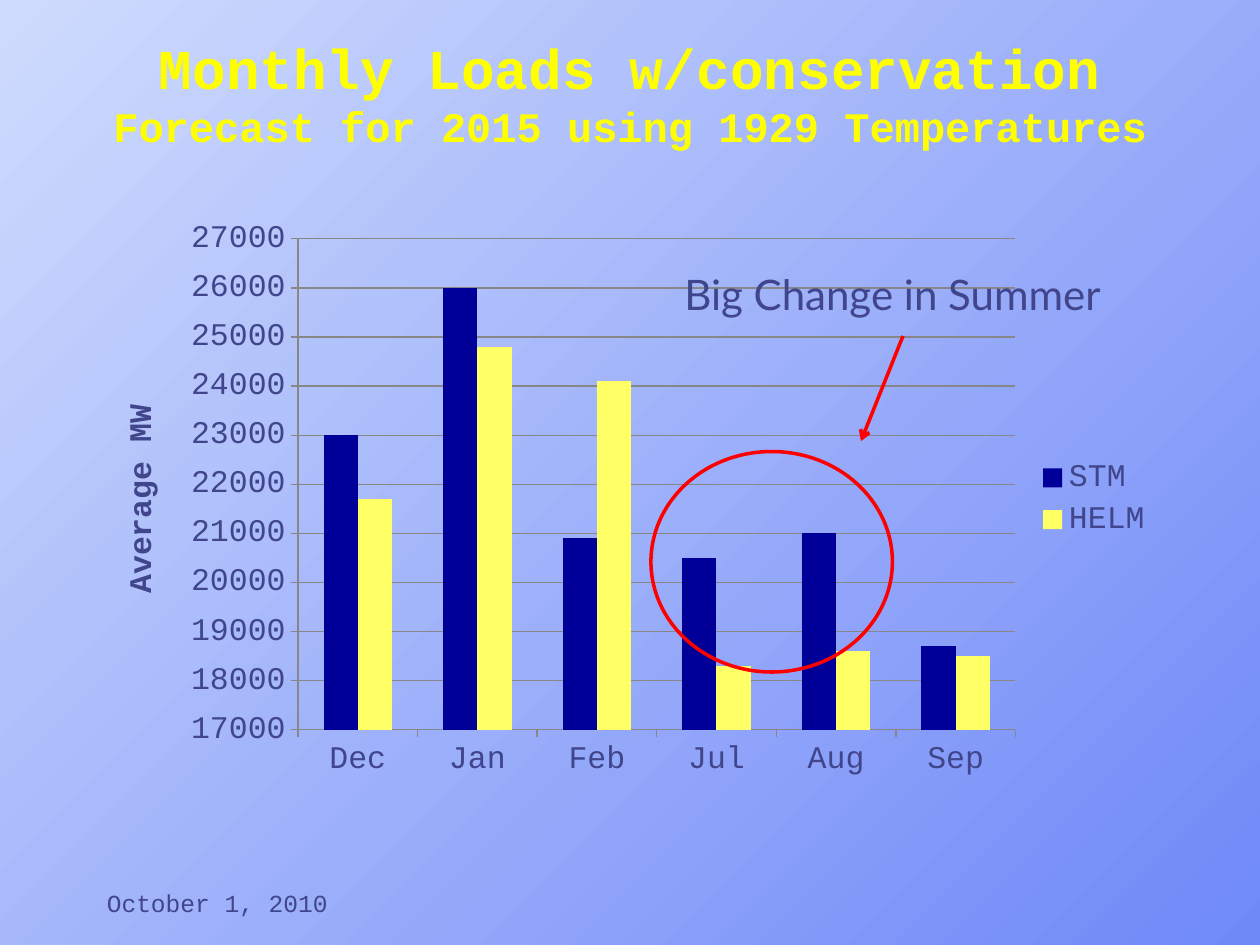
from dataclasses import dataclass
from lxml import etree
from pptx import Presentation
from pptx.chart import data as cd
from pptx.dml.color import RGBColor
from pptx.enum import chart as ce, shapes, text
from pptx.oxml import ns
from pptx.util import Pt

PX = 9525
YELLOW = RGBColor(0xFF, 0xFF, 0x00)
INDIGO = RGBColor(0x40, 0x45, 0x8C)
NAVY = RGBColor(0x00, 0x00, 0x99)
LEMON = RGBColor(0xFF, 0xFF, 0x66)
RED = RGBColor(0xFF, 0x00, 0x00)
GRAY = RGBColor(0x87, 0x87, 0x87)
SKY = RGBColor(0xCF, 0xDB, 0xFD)
BLUE = RGBColor(0x6F, 0x89, 0xF7)
MONO = "Courier New"


@dataclass
class Box:
    left: int
    top: int
    width: int
    height: int

    def emu(self) -> tuple:
        return tuple(v * PX for v in (self.left, self.top, self.width, self.height))


@dataclass
class Label:
    wording: str
    box: Box
    size: int
    font: str
    anchor: text.MSO_ANCHOR


@dataclass
class Load:
    model: str
    megawatts: tuple
    color: RGBColor


MONTHS = ("Dec", "Jan", "Feb", "Jul", "Aug", "Sep")
LOADS = (
    Load("STM", (23000, 26000, 20900, 20500, 21000, 18700), NAVY),
    Load("HELM", (21700, 24800, 24100, 18300, 18600, 18500), LEMON),
)
LABELS = (
    Label("October 1, 2010", Box(72, 656, 200, 48), 14, MONO, text.MSO_ANCHOR.BOTTOM),
    Label("Big Change in Summer", Box(512, 200, 384, 48), 24, "Lato", text.MSO_ANCHOR.TOP),
)
PLOT = {"xMode": "edge", "yMode": "edge", "x": 0.19, "y": 0.05, "w": 0.67, "h": 0.85}


def apply(target, values: dict) -> None:
    for key, value in values.items():
        setattr(target, key, value)


def style_font(font, size: int, name: str, color: RGBColor, bold: bool = False) -> None:
    apply(font, {"size": Pt(size), "name": name, "bold": bold})
    font.color.rgb = color


def style_line(line, color: RGBColor, width: float) -> None:
    line.color.rgb = color
    line.width = Pt(width)


def paint_background(slide) -> None:
    fill = slide.background.fill
    fill.gradient()
    fill.gradient_angle = 315
    for stop, color, position in zip(fill.gradient_stops, (SKY, BLUE), (0, 1)):
        stop.color.rgb = color
        stop.position = position


def write_title(slide) -> None:
    title = slide.shapes.title
    apply(title, dict(zip(("left", "top", "width", "height"), Box(72, 32, 816, 88).emu())))
    apply(title.text_frame, {"vertical_anchor": text.MSO_ANCHOR.BOTTOM,
                             "auto_size": text.MSO_AUTO_SIZE.NONE, "word_wrap": True})
    heading = title.text_frame.paragraphs[0]
    apply(heading, {"alignment": text.PP_ALIGN.CENTER, "line_spacing": 1.0})
    topic = heading.add_run()
    topic.text = "Monthly Loads w/conservation"
    heading.add_line_break()
    basis = heading.add_run()
    basis.text = "Forecast for 2015 using 1929 Temperatures"
    for run, size in ((topic, 32), (basis, 24)):
        style_font(run.font, size, MONO, YELLOW, True)


def draw_loads(slide, box: Box) -> None:
    monthly = cd.CategoryChartData(number_format="General")
    monthly.categories = MONTHS
    for load in LOADS:
        monthly.add_series(load.model, load.megawatts)
    chart = slide.shapes.add_chart(ce.XL_CHART_TYPE.COLUMN_CLUSTERED, *box.emu(), monthly).chart
    style_font(chart.font, 18, MONO, INDIGO)
    apply(chart, {"has_title": False, "has_legend": True})
    apply(chart.legend, {"position": ce.XL_LEGEND_POSITION.RIGHT, "include_in_layout": False})
    columns = chart.plots[0]
    apply(columns, {"gap_width": 150, "overlap": 0, "vary_by_categories": False})
    for series, load in zip(columns.series, LOADS):
        series.format.fill.solid()
        series.format.fill.fore_color.rgb = load.color
        series.invert_if_negative = False
    megawatts = chart.value_axis
    apply(megawatts, {"minimum_scale": 17000, "maximum_scale": 27000, "major_unit": 1000,
                      "has_major_gridlines": True, "has_title": True})
    style_line(megawatts.major_gridlines.format.line, GRAY, 0.75)
    for axis in (chart.category_axis, megawatts):
        axis.major_tick_mark = ce.XL_TICK_MARK.OUTSIDE
        style_line(axis.format.line, GRAY, 0.75)
    caption = megawatts.axis_title.text_frame.paragraphs[0].add_run()
    caption.text = "Average MW"
    style_font(caption.font, 18, MONO, INDIGO, True)
    plot_area = columns._element.getparent()
    for old in plot_area.findall(ns.qn("c:layout")):
        plot_area.remove(old)
    layout = etree.Element(ns.qn("c:layout"))
    manual = etree.SubElement(layout, ns.qn("c:manualLayout"))
    for tag, value in {"layoutTarget": "inner", **PLOT}.items():
        etree.SubElement(manual, ns.qn(f"c:{tag}")).set("val", str(value))
    plot_area.insert(0, layout)


def write_label(slide, label: Label) -> None:
    frame = slide.shapes.add_textbox(*label.box.emu()).text_frame
    apply(frame, {"word_wrap": True, "vertical_anchor": label.anchor})
    run = frame.paragraphs[0].add_run()
    run.text = label.wording
    style_font(run.font, label.size, label.font, INDIGO)


def circle_summer(slide, box: Box) -> None:
    summer = slide.shapes.add_shape(shapes.MSO_SHAPE.OVAL, *box.emu())
    summer.shadow.inherit = False
    summer.fill.background()
    style_line(summer.line, RED, 2)


def point_to_summer(slide, start: tuple, end: tuple) -> None:
    pointer = slide.shapes.add_connector(
        shapes.MSO_CONNECTOR.STRAIGHT, *(v * PX for v in start + end))
    style_line(pointer.line, RED, 2)
    etree.SubElement(pointer.line._get_or_add_ln(), ns.qn("a:tailEnd")).set("type", "arrow")
    etree.SubElement(pointer._element.spPr, ns.qn("a:effectLst"))


def main() -> None:
    deck = Presentation()
    apply(deck, {"slide_width": 960 * PX, "slide_height": 720 * PX})
    slide = deck.slides.add_slide(deck.slide_layouts[5])
    date, remark = LABELS
    paint_background(slide)
    write_title(slide)
    draw_loads(slide, Box(72, 160, 816, 440))
    write_label(slide, date)
    circle_summer(slide, Box(496, 344, 184, 168))
    point_to_summer(slide, (688, 256), (656, 336))
    write_label(slide, remark)
    deck.save("out.pptx")


if __name__ == "__main__":
    main()
